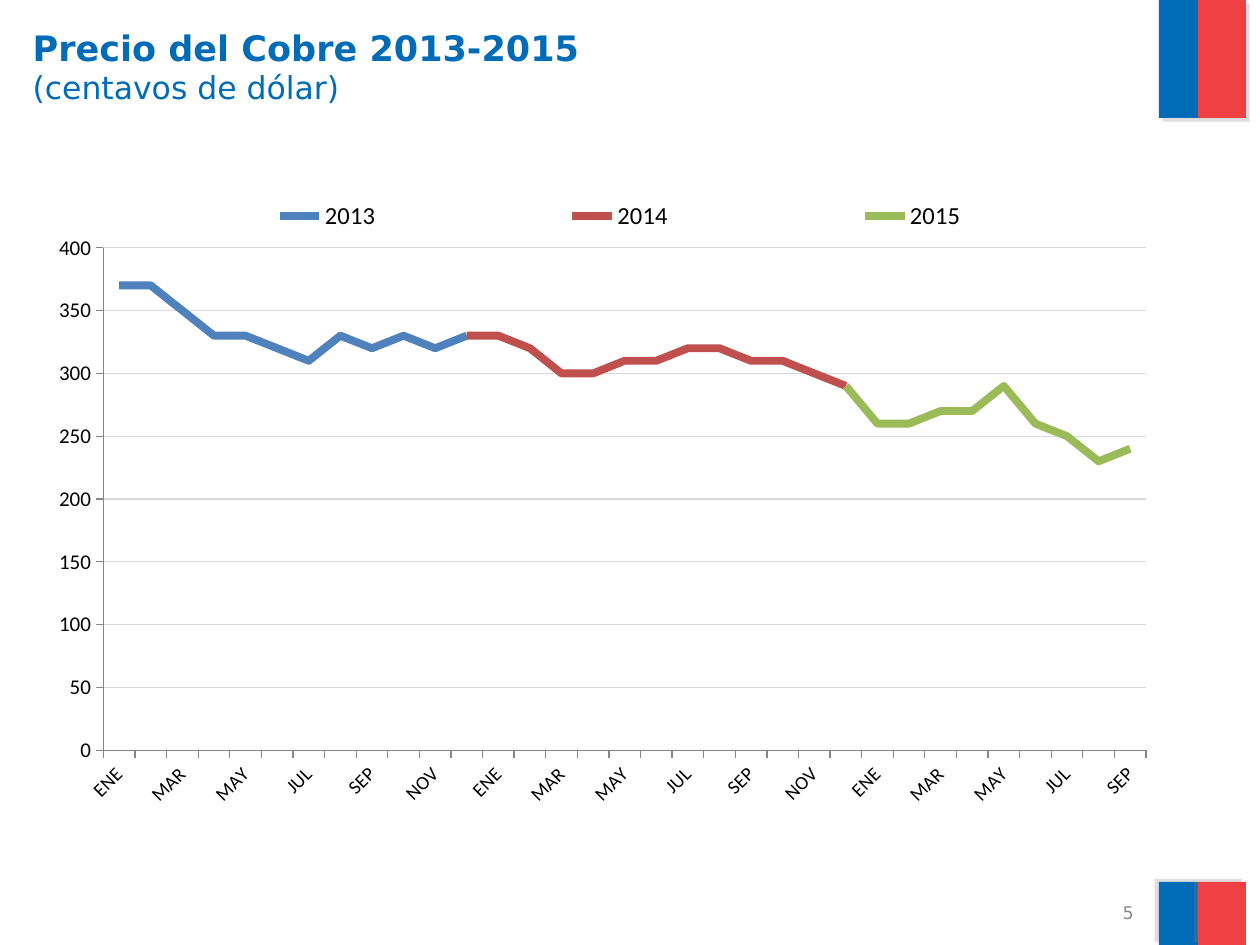
import dataclasses

import lxml.etree
import pptx
import pptx.chart.data
import pptx.dml.color
import pptx.enum.chart
import pptx.enum.shapes
import pptx.enum.text
import pptx.oxml
import pptx.oxml.ns
import pptx.util

EMU_PER_PX = 914400 / 126
MONTHS = ["ENE", "FEB", "MAR", "ABR", "MAY", "JUN",
          "JUL", "AGO", "SEP", "OCT", "NOV", "DIC"]
MONTH_COUNT = 33
PRICES = {
    "2013": (0, [370, 370, 350, 330, 330, 320, 310, 330, 320, 330, 320, 330]),
    "2014": (11, [330, 330, 320, 300, 300, 310, 310, 320, 320, 310, 310, 300, 290]),
    "2015": (23, [290, 260, 260, 270, 270, 290, 260, 250, 230, 240]),
}


@dataclasses.dataclass(frozen=True)
class Theme:
    blue: str = "006CB7"
    red: str = "EF4144"
    grey: str = "898989"
    shadow: str = "808080"
    black: str = "000000"
    grid: str = "D9D9D9"
    axis: str = "868686"
    lines: tuple = ("4F81BD", "C0504D", "9BBB59")
    text_font: str = "DejaVu Sans"
    chart_font: str = "Calibri"
    title_size: int = 20
    subtitle_size: int = 18
    number_size: int = 10
    month_size: int = 11
    price_size: int = 12
    legend_size: int = 14


def px(length):
    return pptx.util.Emu(round(length * EMU_PER_PX))


def rgb(colour):
    return pptx.dml.color.RGBColor.from_string(colour)


def apply(target, values):
    for name, value in values.items():
        setattr(target, name, value)


class SlideBuilder:
    def __init__(self, page, theme):
        self.page = page
        self.theme = theme

    def style_font(self, font, size, colour, name, bold=False):
        apply(font, {"size": pptx.util.Pt(size), "name": name, "bold": bold})
        font.color.rgb = rgb(colour)

    def style_line(self, line, colour, width):
        line.color.rgb = rgb(colour)
        line.width = pptx.util.Pt(width)

    def add_title(self, area, heading, subheading):
        box = self.page.shapes.title
        apply(box, dict(zip(("left", "top", "width", "height"), map(px, area))))
        apply(box.text_frame, {"vertical_anchor": pptx.enum.text.MSO_ANCHOR.TOP,
                               "word_wrap": True,
                               "auto_size": pptx.enum.text.MSO_AUTO_SIZE.NONE})
        para = box.text_frame.paragraphs[0]
        para.alignment = pptx.enum.text.PP_ALIGN.LEFT
        rows = ((heading, self.theme.title_size, True),
                (subheading, self.theme.subtitle_size, False))
        for index, (text, size, bold) in enumerate(rows):
            if index:
                para.add_line_break()
            span = para.add_run()
            span.text = text
            self.style_font(span.font, size, self.theme.blue, self.theme.text_font, bold)

    def add_band(self, area, colour, shadow_angle):
        band = self.page.shapes.add_shape(
            pptx.enum.shapes.MSO_SHAPE.RECTANGLE, *map(px, area))
        band.fill.solid()
        band.fill.fore_color.rgb = rgb(colour)
        band.line.fill.background()
        band.shadow.inherit = False
        effects = band.fill._xPr.find(pptx.oxml.ns.qn("a:effectLst"))
        effects.append(pptx.oxml.parse_xml(
            f'<a:outerShdw {pptx.oxml.ns.nsdecls("a")} blurRad="0" dist="38100" '
            f'dir="{shadow_angle * 60000}" rotWithShape="0">'
            f'<a:srgbClr val="{self.theme.shadow}"><a:alpha val="25000"/></a:srgbClr>'
            '</a:outerShdw>'))

    def add_number(self, area, text):
        box = self.page.shapes.add_textbox(*map(px, area))
        apply(box.text_frame, {"word_wrap": True,
                               "vertical_anchor": pptx.enum.text.MSO_ANCHOR.MIDDLE})
        para = box.text_frame.paragraphs[0]
        para.alignment = pptx.enum.text.PP_ALIGN.RIGHT
        span = para.add_run()
        span.text = text
        self.style_font(span.font, self.theme.number_size, self.theme.grey,
                        self.theme.text_font)

    def place(self, element, layout, inner=False):
        old = element.find(pptx.oxml.ns.qn("c:layout"))
        if old is not None:
            element.remove(old)
        target = '<c:layoutTarget val="inner"/>' if inner else ""
        modes = "".join(f'<c:{axis}Mode val="edge"/>' for axis in "xy")
        sizes = "".join(f'<c:{axis} val="{value}"/>' for axis, value in zip("xywh", layout))
        node = pptx.oxml.parse_xml(
            f'<c:layout {pptx.oxml.ns.nsdecls("c")}><c:manualLayout>'
            f'{target}{modes}{sizes}</c:manualLayout></c:layout>')
        if inner:
            element.insert(0, node)
        else:
            element.find(pptx.oxml.ns.qn("c:legendPos")).addnext(node)

    def add_price_chart(self, area, prices):
        theme = self.theme
        data = pptx.chart.data.CategoryChartData(number_format="0")
        data.categories = [MONTHS[index % 12] for index in range(MONTH_COUNT)]
        for name, (start, values) in prices.items():
            after = MONTH_COUNT - start - len(values)
            data.add_series(name, [None] * start + values + [None] * after)
        chart = self.page.shapes.add_chart(
            pptx.enum.chart.XL_CHART_TYPE.LINE, *map(px, area), data).chart
        apply(chart, {"has_title": False, "has_legend": True})
        self.style_font(chart.font, theme.number_size, theme.black, theme.chart_font)
        chart.plots[0].vary_by_categories = False
        for series, colour in zip(chart.plots[0].series, theme.lines):
            series.smooth = False
            series.marker.style = pptx.enum.chart.XL_MARKER_STYLE.NONE
            self.style_line(series.format.line, colour, 4.5)
        for axis, size in ((chart.category_axis, theme.month_size),
                           (chart.value_axis, theme.price_size)):
            axis.major_tick_mark = pptx.enum.chart.XL_TICK_MARK.OUTSIDE
            self.style_line(axis.format.line, theme.axis, 0.75)
            self.style_font(axis.tick_labels.font, size, theme.black, theme.chart_font)
        labels = chart.category_axis._element.find(pptx.oxml.ns.qn("c:txPr"))
        labels.find(pptx.oxml.ns.qn("a:bodyPr")).set("rot", "-2700000")
        apply(chart.value_axis, {"minimum_scale": 0, "maximum_scale": 400,
                                 "major_unit": 50, "has_major_gridlines": True})
        apply(chart.value_axis.tick_labels, {"number_format": "0",
                                             "number_format_is_linked": False})
        self.style_line(chart.value_axis.major_gridlines.format.line, theme.grid, 0.75)
        apply(chart.legend, {"position": pptx.enum.chart.XL_LEGEND_POSITION.RIGHT,
                             "include_in_layout": False})
        self.style_font(chart.legend.font, theme.legend_size, theme.black, theme.chart_font)
        self.place(chart.legend._element, (0.04, 0.02, 0.94, 0.08))
        plot_area = chart._chartSpace.find(".//" + pptx.oxml.ns.qn("c:plotArea"))
        self.place(plot_area, (0.051, 0.109, 0.926, 0.773), inner=True)


def main():
    deck = pptx.Presentation()
    apply(deck, {"slide_width": px(1260), "slide_height": px(945)})
    theme = Theme()
    page = deck.slides.add_slide(deck.slide_layouts[5])
    builder = SlideBuilder(page, theme)
    for top, height, angle in ((0, 118, 45), (882, 63, 215)):
        builder.add_band((1159, top, 39, height), theme.blue, angle)
        builder.add_band((1198, top, 48, height), theme.red, angle)
    builder.add_title((20, 20, 1125, 158), "Precio del Cobre 2013-2015",
                      "(centavos de dólar)")
    builder.add_number((853, 900, 293, 26), "5")
    builder.add_price_chart((46, 177, 1126, 650), PRICES)
    deck.save("out.pptx")


if __name__ == "__main__":
    main()
